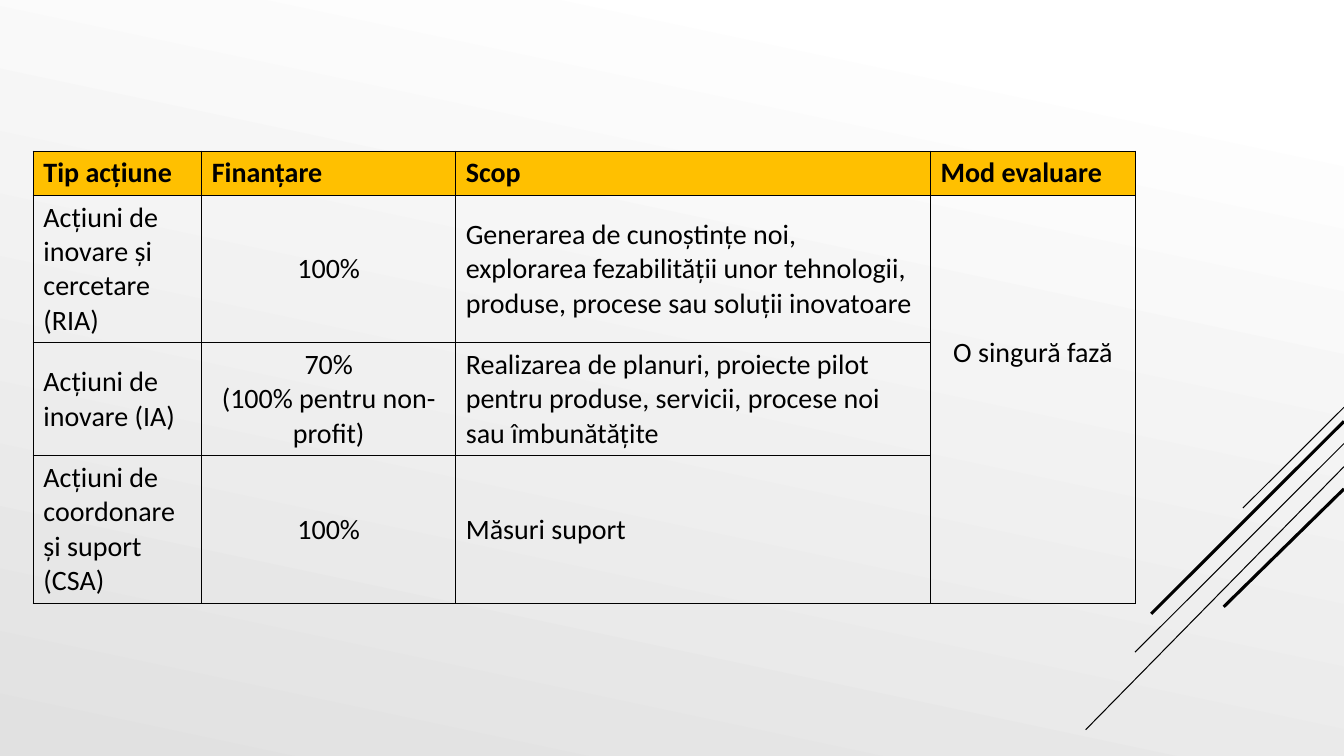
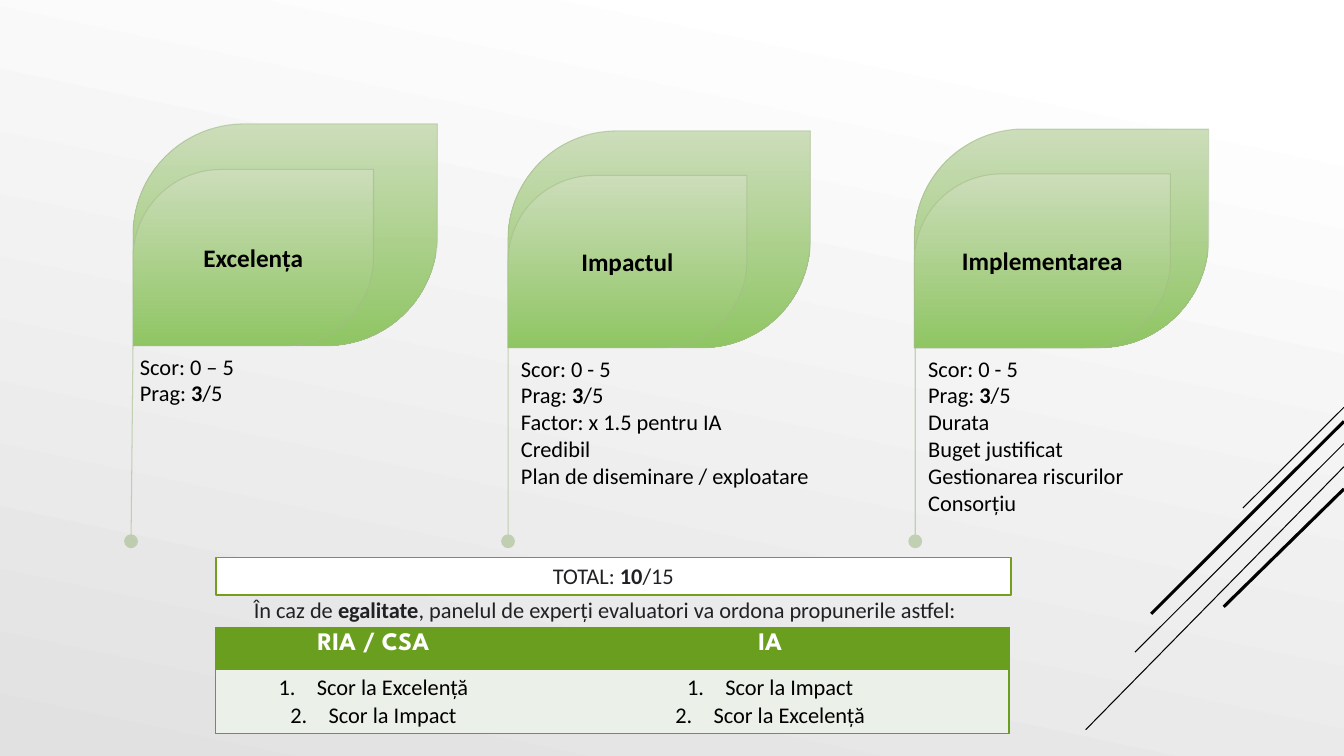
from lxml import etree
from pptx import Presentation
from pptx import util as u
from pptx.dml.color import RGBColor
from pptx.enum import shapes, text
from pptx.oxml.ns import qn

BLACK = RGBColor(0x00, 0x00, 0x00)
WHITE = RGBColor(0xFF, 0xFF, 0xFF)
INK = RGBColor(0x20, 0x21, 0x24)
SILVER = RGBColor(0xE1, 0xE1, 0xE1)
AMBER = RGBColor(0xFF, 0xC0, 0x00)
GREEN = RGBColor(0x6A, 0x9E, 0x1F)
OLIVE = RGBColor(0x75, 0x9E, 0x1F)
MIST = RGBColor(0xEB, 0xF0, 0xE8)
LEAF_TOP = RGBColor(0xCC, 0xDD, 0xBA)
LEAF_BASE = RGBColor(0x8F, 0xC5, 0x63)
LEAF_EDGE = RGBColor(0xA4, 0xBB, 0x8B)

LEFT, CENTER = text.PP_ALIGN.LEFT, text.PP_ALIGN.CENTER
TOP, MIDDLE = text.MSO_ANCHOR.TOP, text.MSO_ANCHOR.MIDDLE

deck = Presentation()
deck.slide_width, deck.slide_height = u.Inches(13.33), u.Inches(7.5)
# Grid of 100 columns by 100 rows
COL, ROW = deck.slide_width / 100, deck.slide_height / 100


def write(frame, lines, size=16, color=BLACK, bold=False, align=LEFT,
          anchor=TOP, font="Calibri", numbered=False):
    """Fill a text frame, one paragraph per line; *stars* enclose bold words."""
    frame.word_wrap = True
    frame.vertical_anchor = anchor
    for i, line in enumerate(lines):
        para = frame.paragraphs[0] if i == 0 else frame.add_paragraph()
        para.alignment = align
        if numbered:
            props = para._p.get_or_add_pPr()
            props.set("marL", str(u.Inches(0.38)))
            props.set("indent", str(-u.Inches(0.38)))
            etree.SubElement(props, qn("a:buAutoNum"), type="arabicPeriod")
        for j, words in enumerate(line.split("*")):
            run = para.add_run()
            run.text = words
            run.font.name, run.font.size = font, u.Pt(size)
            run.font.bold = bold or j % 2 == 1
            run.font.color.rgb = color


def draw_line(slide, x1, y1, x2, y2, color, width):
    """Draw a straight line between two grid points."""
    line = slide.shapes.add_connector(
        shapes.MSO_CONNECTOR.STRAIGHT,
        int(x1 * COL), int(y1 * ROW), int(x2 * COL), int(y2 * ROW))
    line.line.color.rgb, line.line.width = color, u.Pt(width)
    etree.SubElement(line._element.spPr, qn("a:effectLst"))
    return line


# Shared background and diagonal stripes
backdrop = deck.slide_master.background.fill
backdrop.gradient()
backdrop.gradient_angle = 258
for stop, color, position in zip(backdrop.gradient_stops, (WHITE, SILVER), (0.1, 1)):
    stop.color.rgb, stop.position = color, position

STRIPES = [  # start row at the right edge, end column, end row, width
    (53.87, 92.48, 67.2, 0.75),
    (61.73, 80.78, 96.53, 0.75),
    (58.67, 84.45, 86.27, 0.75),
    (55.73, 85.65, 81.2, 2.25),
    (64.67, 91.05, 80.27, 2.25),
]
actions_slide, scoring_slide = [
    deck.slides.add_slide(deck.slide_layouts[6]) for _ in range(2)]
for slide in (actions_slide, scoring_slide):
    for start_row, end_col, end_row, width in STRIPES:
        draw_line(slide, 100, start_row, end_col, end_row, BLACK, width)

# Slide 1: types of action
ACTIONS = [
    (["Tip acțiune"], ["Finanțare"], ["Scop"], ["Mod evaluare"]),
    (["Acțiuni de inovare și cercetare (RIA)"], ["100%"],
     ["Generarea de cunoștințe noi, explorarea fezabilității unor tehnologii, "
      "produse, procese sau soluții inovatoare"], ["O singură fază"]),
    (["Acțiuni de inovare (IA)"], ["70%", "(100% pentru non-profit)"],
     ["Realizarea de planuri, proiecte pilot pentru produse, servicii, "
      "procese noi sau îmbunătățite"], None),
    (["Acțiuni de coordonare și suport (CSA)"], ["100%"], ["Măsuri suport"], None),
]
# Slide 2: ranking of equal scores
TIEBREAK = [
    (["RIA / CSA"], ["IA"]),
    (["Scor la Excelență", "Scor la Impact"], ["Scor la Impact", "Scor la Excelență"]),
]

actions = actions_slide.shapes.add_table(
    4, 4, int(2.48 * COL), int(20 * ROW), int(82 * COL), int(55.73 * ROW)).table
actions.cell(1, 3).merge(actions.cell(3, 3))
for r, row in enumerate(ACTIONS):
    for c, lines in enumerate(row):
        cell = actions.cell(r, c)
        if r == 0:
            cell.fill.solid()
            cell.fill.fore_color.rgb = AMBER
        else:
            cell.fill.background()
        if lines:
            cell.vertical_anchor = MIDDLE
            write(cell.text_frame, lines, size=20, bold=r == 0,
                  align=CENTER if r and c in (1, 3) else LEFT)
phase = actions.cell(1, 3)
phase.vertical_anchor, phase.margin_top = TOP, int(18.5 * ROW)

# Criteria: leaf, stem and details
CRITERIA = [  # name, leaf box, inner share of width, stem foot, details column and width
    ("Excelența", (9.9, 16.4, 22.65, 29.33), 0.79, 9.75, 9.68, 22.73,
     ["Scor: 0 – 5", "Prag: *3*/5"]),
    ("Impactul", (37.8, 17.33, 22.5, 28.67), 0.79, 37.8, 38.03, 24.45,
     ["Scor: 0 - 5", "Prag: *3*/5", "Factor: x 1.5 pentru IA", "Credibil",
      "Plan de diseminare / exploatare"]),
    ("Implementarea", (68.03, 17.07, 21.9, 28.93), 0.87, 68.1, 68.33, 22.73,
     ["Scor: 0 - 5", "Prag: *3*/5", "Durata", "Buget justificat",
      "Gestionarea riscurilor", "Consorțiu"]),
]
for name, (left, top, width, height), share, foot, details_col, details_width, details in CRITERIA:
    bottom = top + height
    parts = []
    for wide, high in ((width, height), (width * share, height * 0.795)):
        leaf = scoring_slide.shapes.add_shape(
            shapes.MSO_SHAPE.ROUND_2_DIAG_RECTANGLE, int(left * COL),
            int((bottom - high) * ROW), int(wide * COL), int(high * ROW))
        leaf.adjustments[0], leaf.adjustments[1] = 0.5, 0
        leaf.shadow.inherit = False
        leaf.fill.gradient()
        leaf.fill.gradient_angle = 270
        for stop, color, position in zip(leaf.fill.gradient_stops, (LEAF_TOP, LEAF_BASE), (0, 1)):
            stop.color.rgb, stop.position = color, position
        leaf.line.color.rgb, leaf.line.width = LEAF_EDGE, u.Pt(0.75)
        parts.append(leaf)
    write(leaf.text_frame, [name], size=18, bold=True, align=CENTER, anchor=MIDDLE)

    stem = draw_line(scoring_slide, max(left, foot), bottom, foot, 71.6, LEAF_EDGE, 0.75)
    for part in parts + [stem]:
        edge = part._element.spPr.find(qn("a:ln"))
        etree.SubElement(next(edge.iter(qn("a:srgbClr"))), qn("a:alpha"), val="60000")
    etree.SubElement(edge, qn("a:tailEnd"), type="oval", w="lg", len="lg")

    notes = scoring_slide.shapes.add_textbox(
        int(details_col * COL), int((bottom + 0.27) * ROW),
        int(details_width * COL), int((1.33 + 3.6 * len(details)) * ROW))
    write(notes.text_frame, details)

# Total score and tie rule
total = scoring_slide.shapes.add_shape(
    shapes.MSO_SHAPE.RECTANGLE, int(16.05 * COL), int(73.73 * ROW),
    int(59.18 * COL), int(4.93 * ROW))
total.shadow.inherit = False
total.fill.solid()
total.fill.fore_color.rgb = WHITE
total.line.color.rgb, total.line.width = OLIVE, u.Pt(1.25)
write(total.text_frame, ["TOTAL: *10*/15"], color=INK, align=CENTER)

tie_rule = scoring_slide.shapes.add_textbox(
    int(18.15 * COL), int(78.13 * ROW), int(59.63 * COL), int(4.93 * ROW))
write(tie_rule.text_frame,
      ["În caz de *egalitate*, panelul de experți evaluatori va ordona propunerile astfel:"],
      color=INK)

tiebreak = scoring_slide.shapes.add_table(
    2, 2, int(16.05 * COL), int(83.07 * ROW), int(59.03 * COL), int(13.87 * ROW)).table
for r, row in enumerate(TIEBREAK):
    for c, lines in enumerate(row):
        cell = tiebreak.cell(r, c)
        cell.fill.solid()
        cell.fill.fore_color.rgb = MIST if r else GREEN
        if r:
            write(cell.text_frame, lines, align=CENTER, numbered=True)
        else:
            write(cell.text_frame, lines, size=18, color=WHITE, bold=True,
                  align=CENTER, font="League Spartan")

# Table sizes and cell borders
for table, widths, heights, color, inner_rules in (
        (actions, (12.53, 18.9, 35.33, 15.23), (5.47, 18.13, 14, 18.13), BLACK, True),
        (tiebreak, (23.48, 35.55), (5.47, 8.4), GREEN, False)):
    table.first_row = table.horz_banding = False
    for column, width in zip(table.columns, widths):
        column.width = int(width * COL)
    for row, height in zip(table.rows, heights):
        row.height = int(height * ROW)
        for c, cell in enumerate(row.cells):
            hidden = set()
            if not inner_rules:
                hidden = {"lnR"} if c == 0 else {"lnL"}
            props = cell._tc.get_or_add_tcPr()
            for i, side in enumerate(("lnL", "lnR", "lnT", "lnB")):
                border = etree.Element(qn("a:" + side), w=str(u.Pt(1)))
                if side in hidden:
                    etree.SubElement(border, qn("a:noFill"))
                else:
                    paint = etree.SubElement(border, qn("a:solidFill"))
                    etree.SubElement(paint, qn("a:srgbClr"), val=str(color))
                props.insert(i, border)

deck.save("out.pptx")
